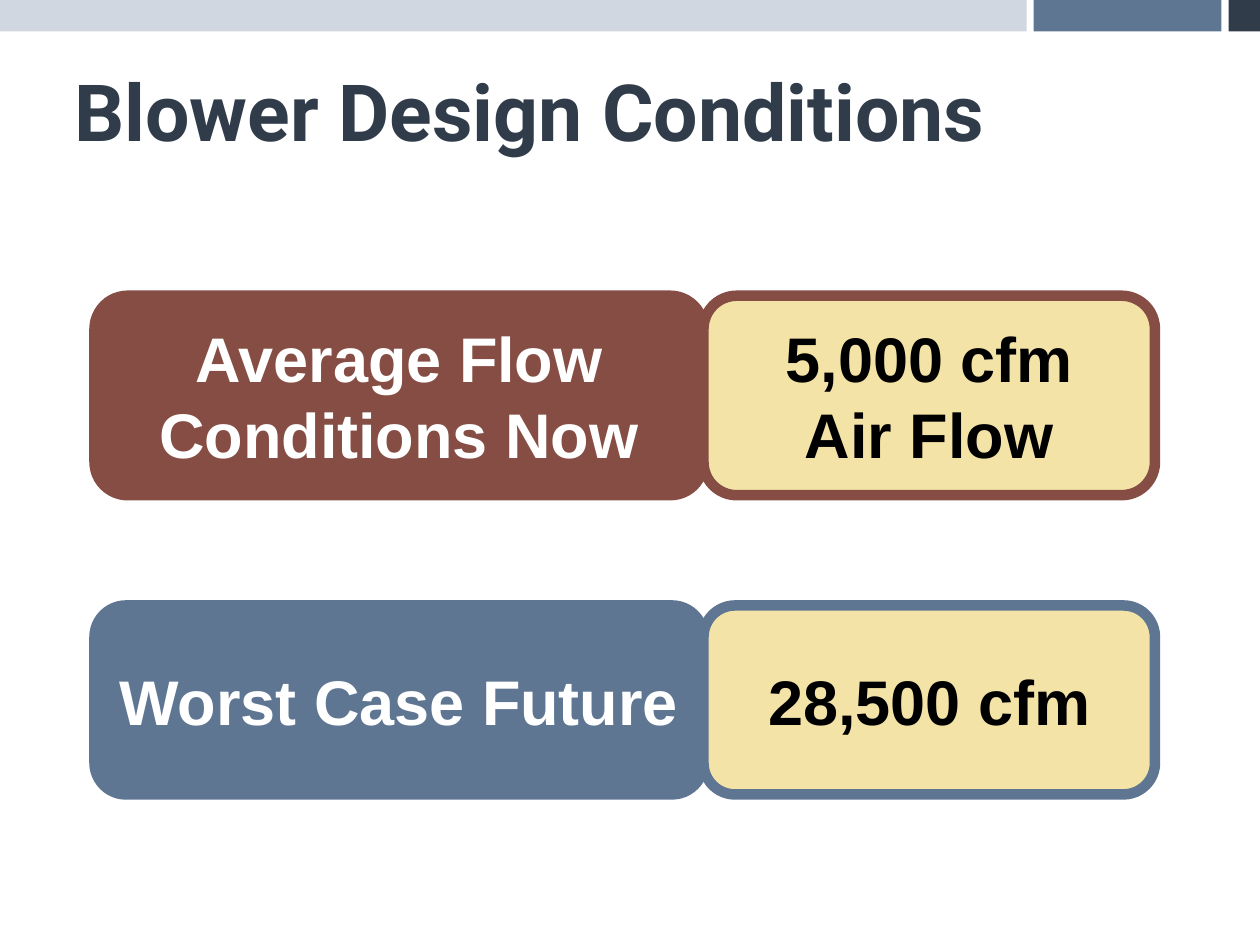
from dataclasses import dataclass

import pptx
import pptx.dml.color
import pptx.enum.shapes
import pptx.enum.text
import pptx.util

Pt = pptx.util.Pt
ShapeType = pptx.enum.shapes.MSO_SHAPE
Alignment = pptx.enum.text.PP_ALIGN
Anchor = pptx.enum.text.MSO_ANCHOR


@dataclass(frozen=True)
class Theme:
    navy: str = "313C4A"
    slate: str = "5F7693"
    mist: str = "D0D7E0"
    brick: str = "864D44"
    sand: str = "F3E3A6"
    white: str = "FFFFFF"
    black: str = "000000"
    title_font: str = "Roboto"
    body_font: str = "Arial"
    title_size: float = 45
    body_size: float = 36
    border: float = 6


THEME = Theme()


def color(value):
    return pptx.dml.color.RGBColor.from_string(value)


def write_text(shape, text, font_name, size, text_color, alignment):
    frame = shape.text_frame
    frame.word_wrap = True
    frame.vertical_anchor = Anchor.MIDDLE
    frame.text = text
    for paragraph in frame.paragraphs:
        paragraph.alignment = alignment
        for run in paragraph.runs:
            run.font.name = font_name
            run.font.size = Pt(size)
            run.font.bold = True
            run.font.color.rgb = color(text_color)


def add_block(slide, kind, box, fill, border=None):
    shape = slide.shapes.add_shape(kind, *map(Pt, box))
    shape.shadow.inherit = False
    shape.fill.solid()
    shape.fill.fore_color.rgb = color(fill)
    if border:
        shape.line.color.rgb = color(border)
        shape.line.width = Pt(THEME.border)
    else:
        shape.line.fill.background()
    return shape


def add_top_band(slide, box):
    left, top, width, height = box
    gap = 4
    accent_width = 107.3
    end_width = height
    main_width = width - accent_width - end_width - 2 * gap
    for part_width, fill in (
        (main_width, THEME.mist),
        (accent_width, THEME.slate),
        (end_width, THEME.navy),
    ):
        add_block(slide, ShapeType.RECTANGLE, (left, top, part_width, height), fill)
        left += part_width + gap


def add_title(slide, box, text):
    title = slide.shapes.add_textbox(*map(Pt, box))
    write_text(title, text, THEME.title_font, THEME.title_size, THEME.navy, Alignment.LEFT)


def add_condition(slide, box, label, value, accent):
    left, top, width, height = box
    label_width = 348
    for cell_left, cell_width, text, fill, text_color in (
        (left, label_width, label, accent, THEME.white),
        (left + label_width, width - label_width, value, THEME.sand, THEME.black),
    ):
        cell_box = (cell_left, top, cell_width, height)
        cell = add_block(slide, ShapeType.ROUNDED_RECTANGLE, cell_box, fill, accent)
        write_text(cell, text, THEME.body_font, THEME.body_size, text_color, Alignment.CENTER)


def main():
    presentation = pptx.Presentation()
    presentation.slide_width = Pt(720)
    presentation.slide_height = Pt(540)
    slide = presentation.slides.add_slide(presentation.slide_layouts[6])
    add_top_band(slide, (0, 0, 720, 18))
    add_title(slide, (35.3, 34.6, 646.6, 56.2), "Blower Design Conditions")
    add_condition(
        slide, (54, 169, 606, 114), "Average Flow Conditions Now", "5,000 cfm\vAir Flow", THEME.brick
    )
    add_condition(slide, (54, 346, 606, 108), "Worst Case Future", "28,500 cfm", THEME.slate)
    presentation.save("out.pptx")


if __name__ == "__main__":
    main()
